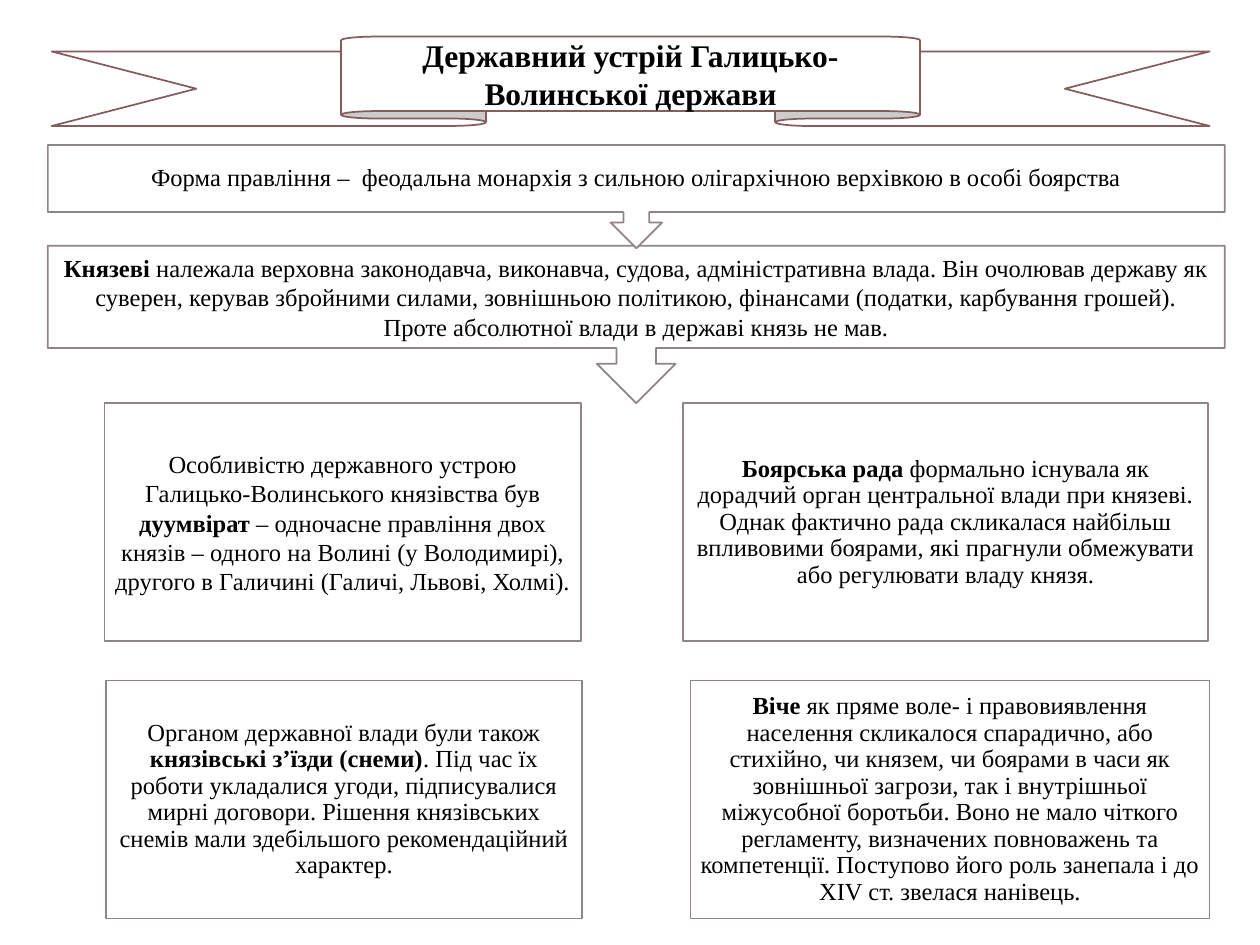
from pptx import Presentation
from pptx import util as u
from pptx.dml.color import RGBColor
from pptx.enum import shapes, text

FONT = "Times New Roman"
INK, PAPER, FRAME, RIBBON = "000000", "FFFFFF", "918485", "855D5D"
KIND = shapes.MSO_SHAPE

# Content: each paragraph is a list of (words, bold) spans
TITLE = [[("Державний устрій Галицько-Волинської держави", True)]]
FORM = [[("Форма правління –  феодальна монархія з сильною олігархічною "
          "верхівкою в особі боярства", False)]]
PRINCE = [
    [("Князеві ", True),
     ("належала верховна законодавча, виконавча, судова, адміністративна влада. "
      "Він очолював державу як суверен, керував збройними силами, зовнішньою "
      "політикою, фінансами (податки, карбування грошей).", False)],
    [("Проте абсолютної влади в державі князь не мав.", False)],
]
DUUMVIRATE = [
    [("Особливістю державного устрою", False)],
    [("Галицько-Волинського князівства був ", False), ("дуумвірат", True),
     (" – одночасне правління двох князів – одного на Волині (у Володимирі), "
      "другого в Галичині (Галичі, Львові, Холмі).", False)],
]
COUNCIL = [[
    ("Боярська рада", True),
    (" формально існувала як дорадчий орган центральної влади при князеві. Однак "
     "фактично рада скликалася найбільш впливовими боярами, які прагнули "
     "обмежувати або регулювати владу князя.", False)]]
CONGRESS = [[
    ("Органом державної влади були також ", False),
    ("князівські з’їзди (снеми)", True),
    (". Під час їх роботи укладалися угоди, підписувалися мирні договори. Рішення "
     "князівських снемів мали здебільшого рекомендаційний характер.", False)]]
VICHE = [[
    ("Віче", True),
    (" як пряме воле- і правовиявлення населення скликалося спарадично, або "
     "стихійно, чи князем, чи боярами в часи як зовнішньої загрози, так і "
     "внутрішньої міжусобної боротьби. Воно не мало чіткого регламенту, "
     "визначених повноважень та компетенції. Поступово його роль занепала і до "
     "XIV ст. звелася нанівець.", False)]]

# Layout in inches
BAND_LEFT, BAND_WIDTH, BODY_SHARE = 0.38, 9.34, 0.65
ROWS, ROW_HEIGHT = (3.2, 5.4), 1.89
# Callouts: shape, rotation, top, height, paragraphs, line spacing
CALLOUTS = [
    (KIND.DOWN_ARROW_CALLOUT, 0, 1.95, 1.25, PRINCE, 1),
    (KIND.UP_ARROW_CALLOUT, 180, 1.15, 0.82, FORM, 0.9),
]
# Panels by row: left, width, paragraphs, line spacing
PANELS = [
    [(0.83, 3.78, DUUMVIRATE, 1), (5.42, 4.17, COUNCIL, 0.9)],
    [(0.84, 3.78, CONGRESS, 0.9), (5.48, 4.12, VICHE, 0.9)],
]

deck = Presentation()
deck.slide_width, deck.slide_height = u.Inches(10), u.Inches(7.5)
page = deck.slides.add_slide(deck.slide_layouts[6])


def color(value):
    return RGBColor.from_string(value)


def add_outline(kind, place, line):
    shape = page.shapes.add_shape(kind, *map(u.Inches, place))
    shape.shadow.inherit = False
    shape.fill.solid()
    shape.fill.fore_color.rgb = color(PAPER)
    shape.line.color.rgb = color(line)
    shape.line.width = u.Pt(1)
    return shape


def write(box, paragraphs, size=14, spacing=1, inset=(0.06, 0.06)):
    frame = box.text_frame
    frame.word_wrap = True
    frame.vertical_anchor = text.MSO_ANCHOR.MIDDLE
    frame.margin_left = frame.margin_right = u.Inches(inset[0])
    frame.margin_top = frame.margin_bottom = u.Inches(inset[1])
    for index, spans in enumerate(paragraphs):
        para = frame.add_paragraph() if index else frame.paragraphs[0]
        para.alignment = text.PP_ALIGN.CENTER
        para.line_spacing = spacing
        para.font.name, para.font.size = FONT, u.Pt(size)
        para.font.color.rgb = color(INK)
        for words, bold in spans:
            span = para.add_run()
            span.text = words
            span.font.bold = bold


# Callout bands, with upright text over the body of each
for kind, rotation, top, height, paragraphs, spacing in CALLOUTS:
    callout = add_outline(kind, (BAND_LEFT, top, BAND_WIDTH, height), FRAME)
    callout.rotation = rotation
    body = (BAND_LEFT, top, BAND_WIDTH, height * BODY_SHARE)
    box = page.shapes.add_textbox(*map(u.Inches, body))
    write(box, paragraphs, spacing=spacing, inset=(0.11, 0.11))

# Title ribbon
ribbon = add_outline(KIND.UP_RIBBON, (0.41, 0.29, 9.19, 0.71), RIBBON)
write(ribbon, TITLE, size=18, inset=(0.1, 0.05))

# Four panels
for top, row in zip(ROWS, PANELS):
    for left, width, paragraphs, spacing in row:
        panel = add_outline(KIND.RECTANGLE, (left, top, width, ROW_HEIGHT), FRAME)
        write(panel, paragraphs, spacing=spacing)

deck.save("out.pptx")
